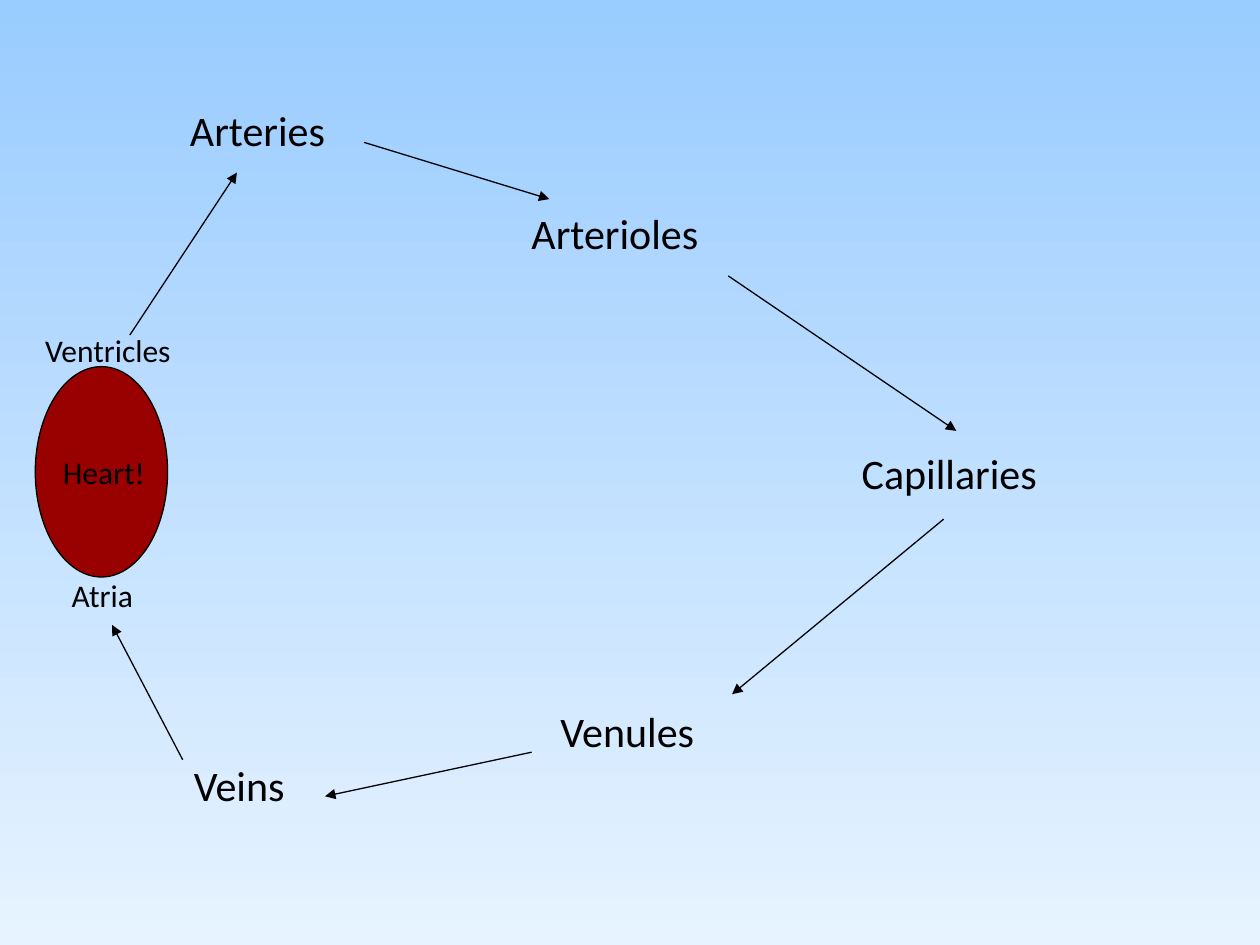
from dataclasses import dataclass
from pptx import Presentation
from pptx.dml.color import RGBColor
from pptx.enum.shapes import MSO_CONNECTOR as Connector, MSO_SHAPE as Shape
from pptx.enum.text import MSO_ANCHOR as Anchor, MSO_AUTO_SIZE as AutoSize
from pptx.oxml.ns import qn
from pptx.slide import Slide
from pptx.util import Inches, Pt
from lxml.etree import SubElement

SKY = RGBColor(0x99, 0xCC, 0xFF)
PALE = RGBColor(0xE7, 0xF3, 0xFF)
BLOOD = RGBColor(0x99, 0x00, 0x00)
BLACK = RGBColor(0x00, 0x00, 0x00)

VESSELS = [
    ("Arteries", 1.41, 0.78, 1.44),
    ("Arterioles", 4.12, 1.6, 1.84),
    ("Capillaries", 6.74, 3.5, 1.87),
    ("Venules", 4.35, 5.55, 1.44),
    ("Veins", 1.44, 5.98, 1.39),
]
HEART_LABELS = [
    ("Heart!", 0.4, 3.55, 0.88),
    ("Ventricles", 0.26, 2.58, 1.21),
    ("Atria", 0.47, 4.52, 0.72),
]
FLOWS = [
    ((1.03, 2.66), (1.88, 1.37)),
    ((2.89, 1.13), (4.36, 1.58)),
    ((5.78, 2.19), (7.59, 3.42)),
    ((7.49, 4.12), (5.81, 5.51)),
    ((4.22, 5.97), (2.58, 6.32)),
    ((1.45, 6.03), (0.89, 4.96)),
]


@dataclass
class Diagram:
    page: Slide
    font: str = "Calibri"
    ink: RGBColor = BLACK
    line_width: float = 0.75

    def background(self, top, bottom):
        fill = self.page.background.fill
        fill.gradient()
        fill.gradient_angle = 270
        for stop, color in zip(fill.gradient_stops, (top, bottom)):
            stop.color.rgb = color

    def label(self, text, left, top, width, height, size, wrap, anchor):
        box = self.page.shapes.add_textbox(*map(Inches, (left, top, width, height)))
        frame = box.text_frame
        frame.word_wrap = wrap
        frame.auto_size = AutoSize.SHAPE_TO_FIT_TEXT
        frame.vertical_anchor = anchor
        para = frame.paragraphs[0]
        para.text = text
        para.font.name = self.font
        para.font.size = Pt(size)
        para.font.color.rgb = self.ink

    def outline(self, line):
        line.color.rgb = self.ink
        line.width = Pt(self.line_width)

    def ellipse(self, left, top, width, height, color):
        oval = self.page.shapes.add_shape(
            Shape.OVAL, *map(Inches, (left, top, width, height)))
        oval.shadow.inherit = False
        oval.fill.solid()
        oval.fill.fore_color.rgb = color
        self.outline(oval.line)

    def arrow(self, start, end):
        arrow = self.page.shapes.add_connector(
            Connector.STRAIGHT, *map(Inches, start + end))
        self.outline(arrow.line)
        SubElement(arrow.line._get_or_add_ln(), qn("a:tailEnd"), type="triangle")
        SubElement(arrow._element.spPr, qn("a:effectLst"))


def main():
    deck = Presentation()
    deck.slide_width, deck.slide_height = Inches(10), Inches(7.5)
    diagram = Diagram(deck.slides.add_slide(deck.slide_layouts[6]))
    diagram.background(SKY, PALE)
    for text, left, top, width in VESSELS:
        diagram.label(text, left, top, width, 0.5, 24, True, Anchor.MIDDLE)
    diagram.ellipse(0.28, 2.91, 1.05, 1.67, BLOOD)
    for text, left, top, width in HEART_LABELS:
        diagram.label(text, left, top, width, 0.4, 18, False, Anchor.TOP)
    for start, end in FLOWS:
        diagram.arrow(start, end)
    deck.save("out.pptx")


if __name__ == "__main__":
    main()
